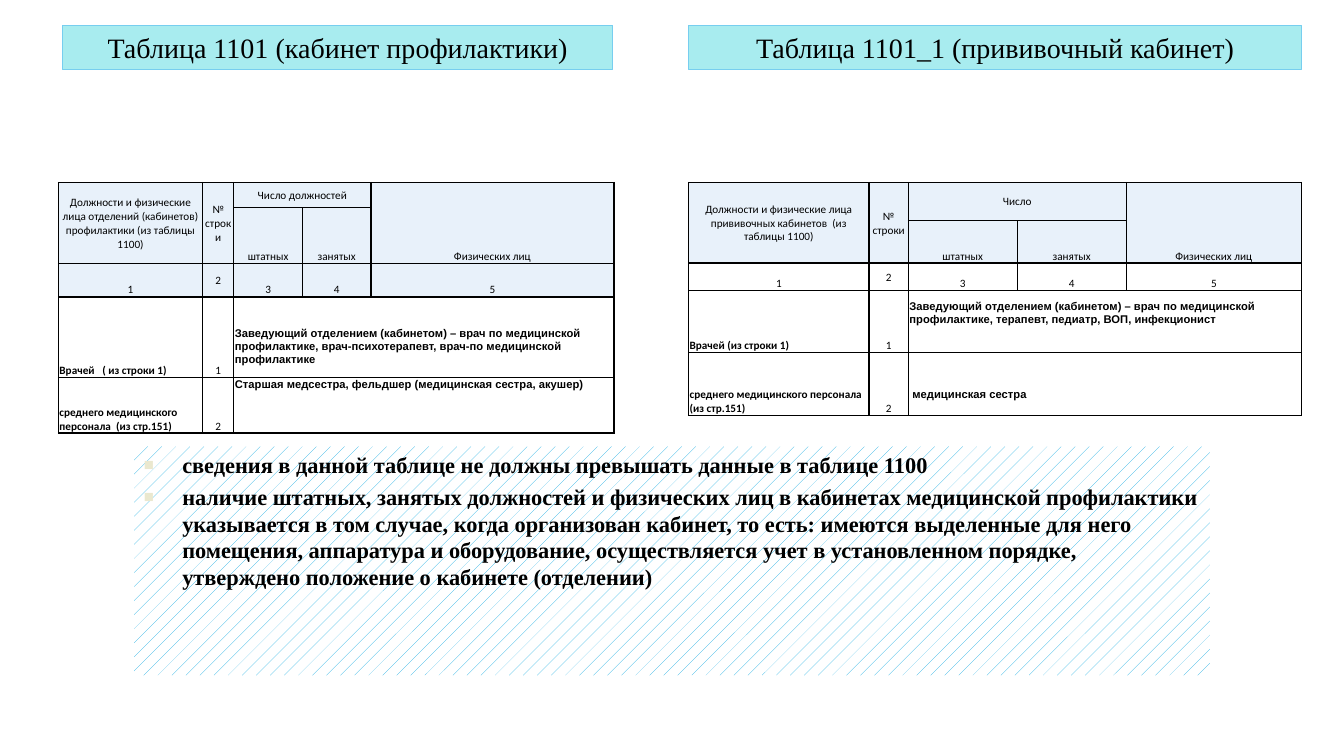
from lxml.etree import SubElement
from pptx import Presentation
from pptx.dml.color import RGBColor
from pptx.enum.dml import MSO_PATTERN
from pptx.enum.shapes import MSO_SHAPE
from pptx.enum.text import MSO_ANCHOR, PP_ALIGN
from pptx.oxml.ns import qn
from pptx.util import Inches, Pt

COLORS = {
    "text": "000000", "title": "A8ECEF", "title_line": "77CEEF", "header": "E8F1FA",
    "body": "FFFFFF", "hatch": "1CADE4", "bullet": "EAE8CF", "border": "000000",
}
COLOR = {name: RGBColor.from_string(value) for name, value in COLORS.items()}
HANGING = Inches(0.38)
TOP, MIDDLE, BOTTOM = MSO_ANCHOR.TOP, MSO_ANCHOR.MIDDLE, MSO_ANCHOR.BOTTOM


def format_paragraph(paragraph, font_name, size, bold, alignment):
    paragraph.alignment = alignment
    for run in paragraph.runs:
        run.font.name = font_name
        run.font.size = Pt(size)
        run.font.bold = bold
        run.font.color.rgb = COLOR["text"]


def add_box(left, top, width, height):
    shape = slide.shapes.add_shape(
        MSO_SHAPE.RECTANGLE, Inches(left), Inches(top), Inches(width), Inches(height))
    shape.shadow.inherit = False
    shape.text_frame.word_wrap = True
    return shape


presentation = Presentation()
presentation.slide_width = Inches(13.33)
presentation.slide_height = Inches(7.5)
slide = presentation.slides.add_slide(presentation.slide_layouts[6])

titles = [
    (0.62, 5.46, "Таблица 1101 (кабинет профилактики)"),
    (6.83, 6.08, "Таблица 1101_1 (прививочный кабинет)"),
]
for left, width, title in titles:
    shape = add_box(left, 0.25, width, 0.44)
    shape.fill.solid()
    shape.fill.fore_color.rgb = COLOR["title"]
    shape.line.color.rgb = COLOR["title_line"]
    shape.line.width = Pt(0.75)
    shape.text_frame.text = title
    paragraph = shape.text_frame.paragraphs[0]
    format_paragraph(paragraph, "Times New Roman", 20, False, PP_ALIGN.CENTER)
    properties = paragraph._p.get_or_add_pPr()
    properties.set("marL", str(HANGING))
    properties.set("indent", str(-HANGING))

notes = [
    "сведения в данной таблице не должны превышать данные в таблице 1100",
    "наличие штатных, занятых должностей и физических лиц в кабинетах медицинской "
    "профилактики указывается в том случае, когда организован кабинет, то есть: имеются "
    "выделенные для него помещения, аппаратура и оборудование, осуществляется учет в "
    "установленном порядке, утверждено положение о кабинете (отделении)",
]
shape = add_box(1.33, 4.43, 10.67, 2.27)
shape.fill.patterned()
shape.fill.pattern = MSO_PATTERN.PERCENT_5
shape.fill.fore_color.rgb = COLOR["hatch"]
shape.fill.back_color.rgb = COLOR["body"]
shape.line.fill.background()
shape.text_frame.vertical_anchor = TOP
shape.text_frame.text = "\n".join(notes)
for paragraph in shape.text_frame.paragraphs:
    format_paragraph(paragraph, "Times New Roman", 16, True, PP_ALIGN.LEFT)
    paragraph.space_before = Pt(3.2)
    properties = paragraph._p.get_or_add_pPr()
    properties.set("marL", str(HANGING))
    properties.set("indent", str(-HANGING))
    bullet_color = SubElement(properties, qn("a:buClr"))
    SubElement(bullet_color, qn("a:srgbClr"), val=COLORS["bullet"])
    SubElement(properties, qn("a:buSzPct"), val="75000")
    SubElement(properties, qn("a:buFont"), typeface="Arial")
    SubElement(properties, qn("a:buChar"), char="■")

staff_tables = [
    {
        "left": 6.83, "numbers": "body",
        "columns": [1.79, 0.39, 1.08, 1.08, 1.74], "rows": [0.38, 0.41, 0.27, 0.62, 0.62],
        "heading": "Должности и физические лица прививочных кабинетов  (из таблицы 1100)",
        "count": "Число",
        "staff": ["Врачей (из строки 1)", "среднего медицинского персонала (из стр.151)"],
        "posts": [
            ("Заведующий отделением (кабинетом) – врач по медицинской профилактике, "
             "терапевт, педиатр, ВОП, инфекционист", BOTTOM, 0.01, 0.27),
            ("медицинская сестра", BOTTOM, 0.04, 0.14),
        ],
    },
    {
        "left": 0.58, "numbers": "header",
        "columns": [1.43, 0.31, 0.68, 0.68, 2.41], "rows": [0.25, 0.55, 0.33, 0.8, 0.55],
        "heading": "Должности и физические лица отделений (кабинетов) профилактики "
                   "(из таблицы 1100)",
        "count": "Число должностей",
        "staff": ["Врачей   ( из строки 1)", "среднего медицинского персонала  (из стр.151)"],
        "posts": [
            ("Заведующий отделением (кабинетом) – врач по медицинской профилактике, "
             "врач-психотерапевт, врач-по медицинской профилактике", BOTTOM, 0.01, 0.12),
            ("Старшая медсестра, фельдшер (медицинская сестра, акушер)", TOP, 0.01, 0),
        ],
    },
]
merges = [(0, 0, 1, 0), (0, 1, 1, 1), (0, 2, 0, 3), (0, 4, 1, 4), (3, 2, 3, 4), (4, 2, 4, 4)]
for staff_table in staff_tables:
    columns, rows = staff_table["columns"], staff_table["rows"]
    frame = slide.shapes.add_table(
        len(rows), len(columns), Inches(staff_table["left"]), Inches(1.81),
        Inches(sum(columns)), Inches(sum(rows)))
    table = frame.table
    for column, width in zip(table.columns, columns):
        column.width = Inches(width)
    for row, height in zip(table.rows, rows):
        row.height = Inches(height)
    for first_row, first_column, last_row, last_column in merges:
        table.cell(first_row, first_column).merge(table.cell(last_row, last_column))

    texts = [
        [staff_table["heading"], "№ строки", staff_table["count"], "", "Физических лиц"],
        ["", "", "штатных", "занятых", ""],
        ["1", "2", "3", "4", "5"],
    ]
    for number, (staff, post) in enumerate(zip(staff_table["staff"], staff_table["posts"]), 1):
        texts.append([staff, str(number), post[0], "", ""])

    for row, row_texts in enumerate(texts):
        fill = "header" if row < 2 else staff_table["numbers"] if row == 2 else "body"
        for column, text in enumerate(row_texts):
            cell = table.cell(row, column)
            properties = cell._tc.get_or_add_tcPr()
            for side in ("a:lnL", "a:lnR", "a:lnT", "a:lnB"):
                border = SubElement(properties, qn(side), w=str(Pt(1)))
                border_fill = SubElement(border, qn("a:solidFill"))
                SubElement(border_fill, qn("a:srgbClr"), val=COLORS["border"])
            cell.fill.solid()
            cell.fill.fore_color.rgb = COLOR[fill]
            cell.margin_left = cell.margin_right = cell.margin_top = Inches(0.01)
            cell.margin_bottom = 0
            centered_row = (row == 0 and column < 4) or (row == 2 and column == 1)
            cell.vertical_anchor = MIDDLE if centered_row else BOTTOM
            is_post = row > 2 and column == 2
            if is_post:
                _, anchor, margin_left, margin_bottom = staff_table["posts"][row - 3]
                cell.vertical_anchor = anchor
                cell.margin_left = Inches(margin_left)
                cell.margin_bottom = Inches(margin_bottom)
            if text:
                is_body = row > 2 and column != 1
                cell.text_frame.text = text
                format_paragraph(
                    cell.text_frame.paragraphs[0], "Arial" if is_post else "Calibri", 8,
                    is_body, PP_ALIGN.LEFT if is_body else PP_ALIGN.CENTER)

presentation.save("out.pptx")
